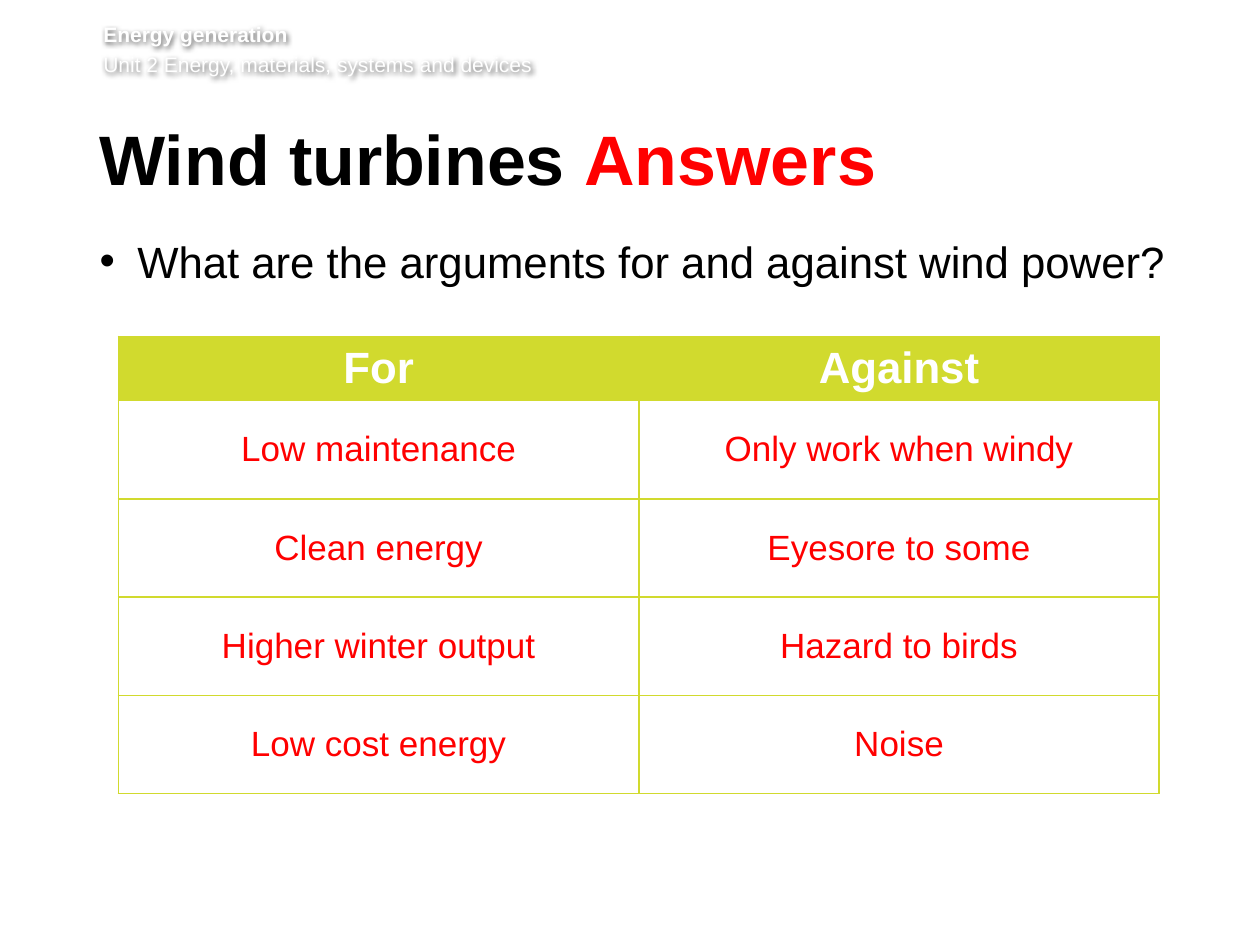
"""Build the wind turbines answers slide."""
from lxml import etree
from pptx import Presentation
from pptx import util as u
from pptx.dml.color import RGBColor
from pptx.enum import text
from pptx.oxml import ns

BLACK = RGBColor(0x00, 0x00, 0x00)
WHITE = RGBColor(0xFF, 0xFF, 0xFF)
RED = RGBColor(0xFF, 0x00, 0x00)
LIME = RGBColor(0xD1, 0xDA, 0x2E)

ARGUMENTS = [
    ("For", "Against"),
    ("Low maintenance", "Only work when windy"),
    ("Clean energy", "Eyesore to some"),
    ("Higher winter output", "Hazard to birds"),
    ("Low cost energy", "Noise"),
]


def add_text(paragraph, words, size=20, color=BLACK, bold=False, font="Arial"):
    run = paragraph.add_run()
    run.text = words
    run.font.name = font
    run.font.size = u.Pt(size)
    run.font.bold = bold
    run.font.color.rgb = color


def add_element(parent, tag, **attributes):
    values = {name: str(value) for name, value in attributes.items()}
    return etree.SubElement(parent, ns.qn(tag), values)


class SlideBuilder:
    def __init__(self, slide, accent=LIME):
        self.slide = slide
        self.accent = accent

    def place(self, shape, box, insets):
        shape.left, shape.top, shape.width, shape.height = map(u.Inches, box)
        frame = shape.text_frame
        frame.word_wrap = True
        frame.auto_size = text.MSO_AUTO_SIZE.NONE
        frame.vertical_anchor = text.MSO_ANCHOR.TOP
        (frame.margin_left, frame.margin_top,
         frame.margin_right, frame.margin_bottom) = map(u.Inches, insets)
        return frame

    def header(self, unit, topic, box):
        shape = self.slide.shapes.add_textbox(0, 0, 0, 0)
        frame = self.place(shape, box, (0, 0, 0, 0.05))
        add_text(frame.paragraphs[0], unit, size=12, color=WHITE, bold=True)
        paragraph = frame.add_paragraph()
        paragraph.space_before = u.Pt(2.9)
        add_text(paragraph, topic, size=12, color=WHITE)
        effects = add_element(shape.element.spPr, "a:effectLst")
        shadow = add_element(effects, "a:outerShdw", blurRad=u.Pt(3), dist=u.Pt(1),
                             dir=2700000, algn="tl", rotWithShape=0)
        color = add_element(shadow, "a:srgbClr", val=BLACK)
        add_element(color, "a:alpha", val=60000)

    def title(self, words, answer, box):
        frame = self.place(self.slide.shapes.title, box, (0, 0.05, 0.1, 0.05))
        paragraph = frame.paragraphs[0]
        paragraph.alignment = text.PP_ALIGN.LEFT
        paragraph.line_spacing = u.Pt(39)
        paragraph.space_after = u.Pt(15)
        add_text(paragraph, words, size=40, bold=True)
        add_text(paragraph, answer, size=40, color=RED, bold=True)

    def bullet(self, words, box, indent=0.3):
        frame = self.place(self.slide.placeholders[1], box, (0, 0, 0.1, 0.05))
        paragraph = frame.paragraphs[0]
        paragraph.space_before = u.Pt(0)
        paragraph.space_after = u.Pt(14)
        properties = paragraph._p.get_or_add_pPr()
        properties.set("marL", str(u.Inches(indent)))
        properties.set("indent", str(-u.Inches(indent)))
        add_element(properties, "a:buChar", char="•")
        add_text(paragraph, words, size=25)

    def border(self, cell):
        properties = cell._tc.get_or_add_tcPr()
        for side in ("a:lnL", "a:lnR", "a:lnT", "a:lnB"):
            line = add_element(properties, side, w=u.Pt(1))
            fill = add_element(line, "a:solidFill")
            add_element(fill, "a:srgbClr", val=self.accent)

    def cell(self, cell, words, heading):
        self.border(cell)
        cell.vertical_anchor = text.MSO_ANCHOR.MIDDLE
        paragraph = cell.text_frame.paragraphs[0]
        paragraph.alignment = text.PP_ALIGN.CENTER
        if heading:
            cell.fill.solid()
            cell.fill.fore_color.rgb = self.accent
            add_text(paragraph, words, size=25, color=WHITE, bold=True)
        else:
            cell.fill.background()
            add_text(paragraph, words, color=RED)

    def table(self, rows, box, heading_height, row_height):
        table = self.slide.shapes.add_table(
            len(rows), len(rows[0]), *map(u.Inches, box)).table
        table.horz_banding = False
        for row_index, row in enumerate(rows):
            heading = row_index == 0
            height = heading_height if heading else row_height
            table.rows[row_index].height = u.Inches(height)
            for column_index, words in enumerate(row):
                self.cell(table.cell(row_index, column_index), words, heading)


def main():
    presentation = Presentation()
    presentation.slide_width = u.Inches(10)
    presentation.slide_height = u.Inches(7.5)
    slide = presentation.slides.add_slide(presentation.slide_layouts[1])
    builder = SlideBuilder(slide)
    builder.header("Energy generation", "Unit 2 Energy, materials, systems and devices",
                   (0.82, 0.17, 8.82, 0.49))
    builder.title("Wind turbines ", "Answers", (0.79, 0.99, 8.55, 0.73))
    builder.bullet("What are the arguments for and against wind power?",
                   (0.79, 1.86, 8.73, 3.78))
    builder.table(ARGUMENTS, (0.94, 2.67, 8.26, 3.62), 0.51, 0.78)
    presentation.save("out.pptx")


if __name__ == "__main__":
    main()
